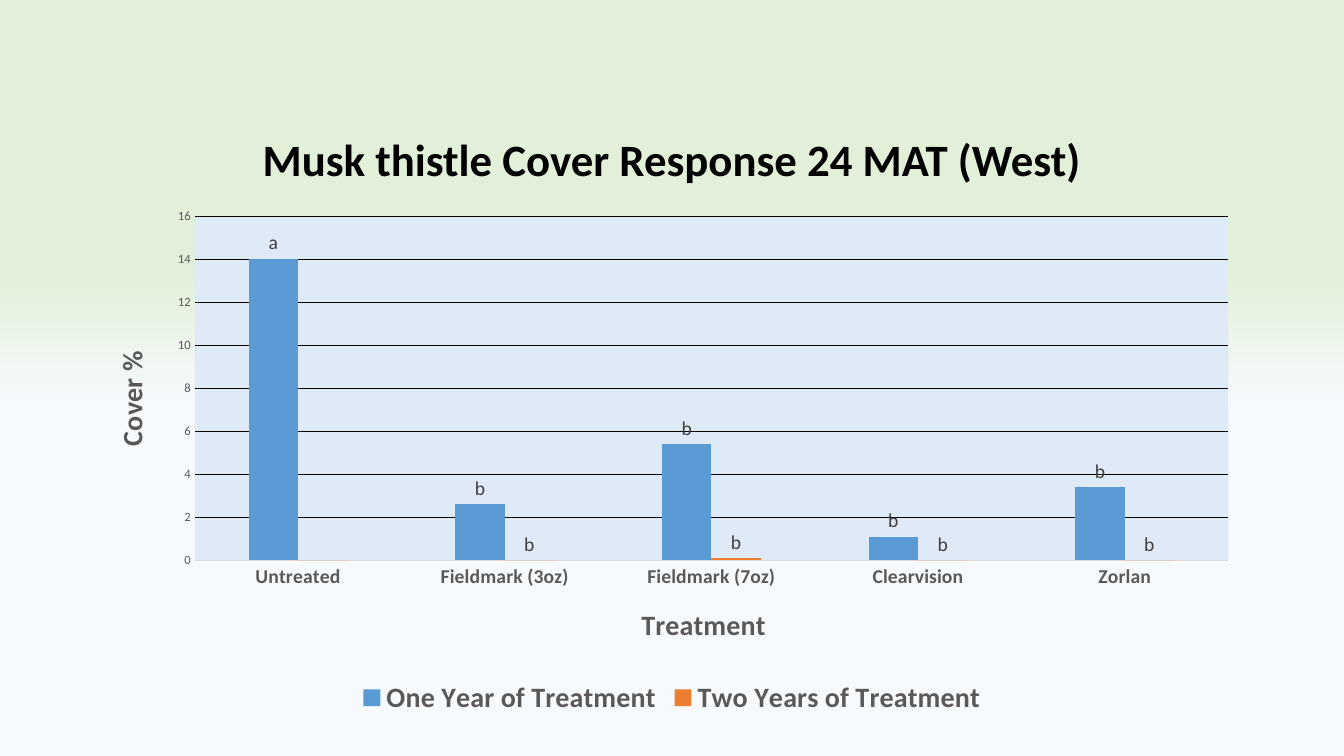
from pptx import Presentation
from pptx.chart.data import CategoryChartData
from pptx.dml.color import RGBColor
from pptx.enum.chart import XL_CHART_TYPE as ChartType
from pptx.enum.chart import XL_LABEL_POSITION as LabelPosition
from pptx.enum.chart import XL_LEGEND_POSITION as LegendPosition
from pptx.enum.chart import XL_TICK_MARK as TickMark
from pptx.enum.text import MSO_ANCHOR as Anchor
from pptx.enum.text import PP_ALIGN as Align
from pptx.oxml import parse_xml
from pptx.oxml.ns import nsdecls, qn
from pptx.util import Pt

FONT = "Calibri"
BLACK = RGBColor(0x00, 0x00, 0x00)
DARK_GREY = RGBColor(0x40, 0x40, 0x40)
GREY = RGBColor(0x59, 0x59, 0x59)
LIGHT_GREY = RGBColor(0xD9, 0xD9, 0xD9)
PALE_GREEN = RGBColor(0xE2, 0xF0, 0xD9)
PALE_WHITE = RGBColor(0xF7, 0xFA, 0xFD)
PALE_BLUE = RGBColor(0xDE, 0xEB, 0xF7)
BLUE = RGBColor(0x5B, 0x9B, 0xD5)
ORANGE = RGBColor(0xED, 0x7D, 0x31)

CHART_WIDTH, CHART_HEIGHT = 828, 373
TREATMENTS = ["Untreated", "Fieldmark (3oz)", "Fieldmark (7oz)", "Clearvision", "Zorlan"]
SERIES = [
    ("One Year of Treatment", [14, 2.6, 5.4, 1.1, 3.4], "abbbb", BLUE),
    ("Two Years of Treatment", [0, 0, 0.1, 0, 0], " bbbb", ORANGE),
]


def style_font(font, size, color, bold=False):
    font.name = FONT
    font.size = Pt(size)
    font.bold = bold
    font.color.rgb = color


def set_background(page):
    fill = page.background.fill
    fill.gradient()
    fill.gradient_angle = 270
    for stop, position, color in zip(fill.gradient_stops, (0.36, 0.54), (PALE_GREEN, PALE_WHITE)):
        stop.position = position
        stop.color.rgb = color


def set_title(page, text):
    title = page.shapes.title
    title.left, title.top, title.width, title.height = Pt(66), Pt(63.3), Pt(828), Pt(104.4)
    frame = title.text_frame
    frame.text = text
    frame.vertical_anchor = Anchor.MIDDLE
    para = frame.paragraphs[0]
    para.alignment = Align.CENTER
    para.line_spacing = 0.9
    style_font(para.runs[0].font, 32, BLACK, True)


def set_layout(element, index, inner=False, **place):
    for old in element.findall(qn("c:layout")):
        element.remove(old)
    target = '<c:layoutTarget val="inner"/>' if inner else ""
    modes = "".join(f'<c:{key}Mode val="edge"/>' for key in "xy")
    extents = {"x": CHART_WIDTH, "y": CHART_HEIGHT, "w": CHART_WIDTH, "h": CHART_HEIGHT}
    values = "".join(
        f'<c:{key} val="{length / extents[key]}"/>' for key, length in place.items()
    )
    layout = (
        f'<c:layout {nsdecls("c")}><c:manualLayout>'
        f"{target}{modes}{values}</c:manualLayout></c:layout>"
    )
    element.insert(index, parse_xml(layout))


def format_axis(axis, title, size, bold, x, y):
    axis.major_tick_mark = axis.minor_tick_mark = TickMark.NONE
    style_font(axis.tick_labels.font, size, GREY, bold)
    frame = axis.axis_title.text_frame
    frame.text = title
    style_font(frame.paragraphs[0].runs[0].font, 20, GREY, True)
    set_layout(axis.axis_title._element, 1, x=x, y=y)


def format_series(series, letters, color):
    series.format.fill.solid()
    series.format.fill.fore_color.rgb = color
    series.invert_if_negative = False
    series.data_labels.show_value = False
    for index, letter in enumerate(letters):
        if letter == " ":
            continue
        label = series.points[index].data_label
        label.text_frame.text = letter
        style_font(label.text_frame.paragraphs[0].runs[0].font, 14, DARK_GREY)
        label.position = LabelPosition.OUTSIDE_END


def add_cover_chart(page):
    data = CategoryChartData()
    data.categories = TREATMENTS
    for name, values, _, _ in SERIES:
        data.add_series(name, values)
    chart = page.shapes.add_chart(
        ChartType.COLUMN_CLUSTERED, Pt(66), Pt(141.8), Pt(CHART_WIDTH), Pt(CHART_HEIGHT), data
    ).chart
    chart.has_title = False
    style_font(chart.font, 10, BLACK)

    plot = chart.plots[0]
    plot.gap_width = 219
    plot.overlap = 0
    plot.vary_by_categories = False
    for series, (_, _, letters, color) in zip(plot.series, SERIES):
        format_series(series, letters, color)

    format_axis(chart.category_axis, "Treatment", 14, True, x=388.5, y=286.6)
    line = chart.category_axis.format.line
    line.color.rgb = LIGHT_GREY
    line.width = Pt(0.75)

    value_axis = chart.value_axis
    format_axis(value_axis, "Cover %", 9, False, x=10.2, y=105.3)
    value_axis.minimum_scale, value_axis.maximum_scale, value_axis.major_unit = 0, 16, 2
    value_axis.format.line.fill.background()
    grid = value_axis.major_gridlines.format.line
    grid.color.rgb = BLACK
    grid.width = Pt(0.75)

    chart.has_legend = True
    chart.legend.position = LegendPosition.BOTTOM
    chart.legend.include_in_layout = False
    style_font(chart.legend.font, 20, GREY, True)

    plot_area = chart._chartSpace.find(f'{qn("c:chart")}/{qn("c:plotArea")}')
    set_layout(plot_area, 0, inner=True, x=73.1, y=12.6, w=738.2, h=246)
    plot_area.append(parse_xml(
        f'<c:spPr {nsdecls("c", "a")}><a:solidFill>'
        f'<a:srgbClr val="{PALE_BLUE}"/></a:solidFill></c:spPr>'
    ))


def main():
    deck = Presentation()
    deck.slide_width, deck.slide_height = Pt(960), Pt(540)
    page = deck.slides.add_slide(deck.slide_layouts[5])
    set_background(page)
    set_title(page, "Musk thistle Cover Response 24 MAT (West)")
    add_cover_chart(page)
    deck.save("out.pptx")


if __name__ == "__main__":
    main()
